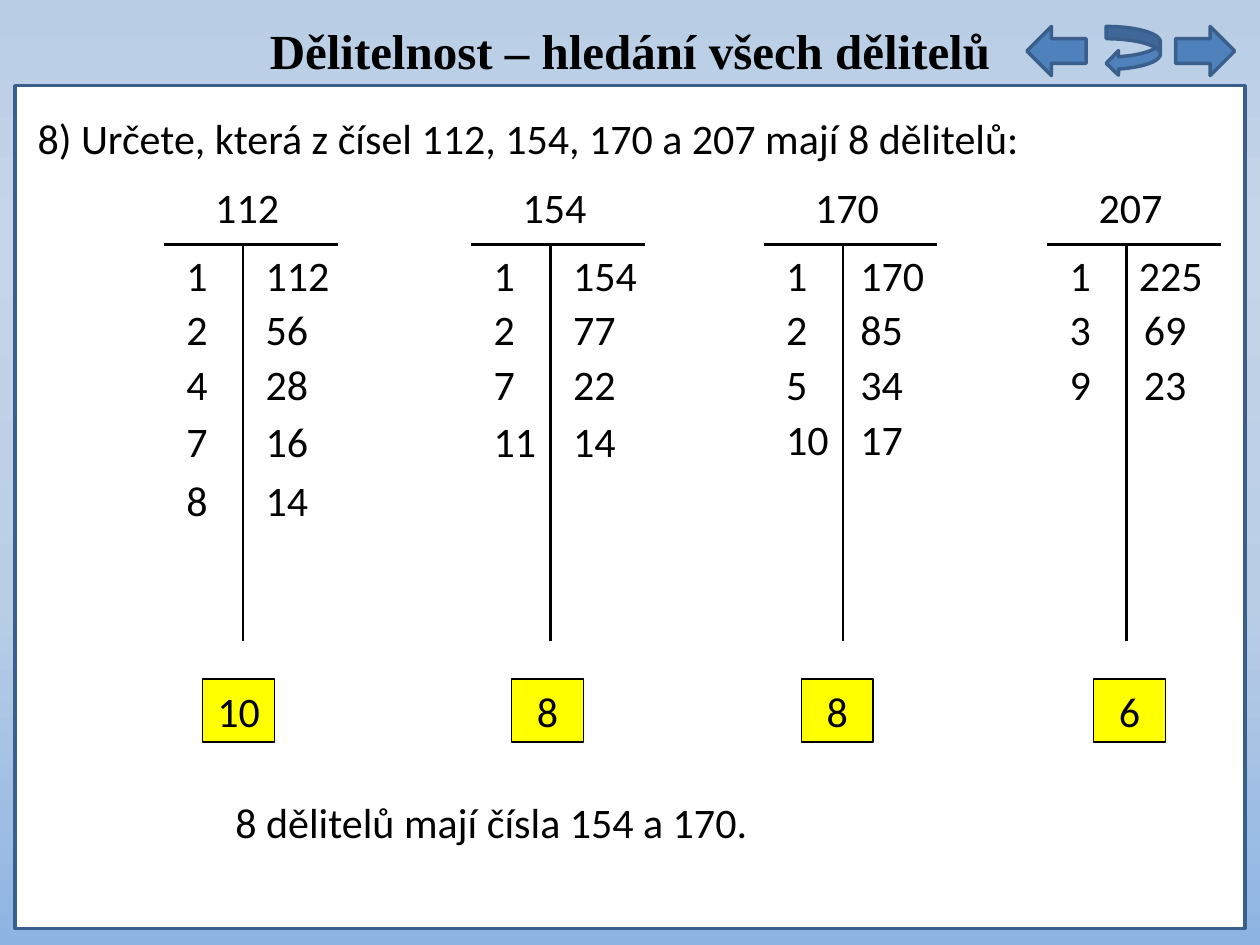
from dataclasses import dataclass

from lxml.etree import SubElement
from pptx import Presentation
from pptx.dml.color import RGBColor
from pptx.enum.shapes import MSO_CONNECTOR, MSO_SHAPE
from pptx.enum.text import MSO_ANCHOR, PP_ALIGN
from pptx.oxml.ns import qn
from pptx.util import Inches, Pt


@dataclass(frozen=True)
class Theme:
    ink: str = "000000"
    paper: str = "FFFFFF"
    blue: str = "4F81BD"
    outline: str = "3A5F8C"
    highlight: str = "FFFF00"
    sky: tuple = ((0, "B9CDE5"), (25, "C5D5E9"), (64, "B9CDE5"), (100, "8EB4E3"))
    title_font: str = "Times New Roman"
    body_font: str = "Calibri"
    title_size: int = 28
    body_size: int = 24


@dataclass(frozen=True)
class DivisorTable:
    number: str
    left: float
    pairs: tuple
    count: str
    count_left: float
    right_offset: float = 0.71
    first_right_offset: float = 0.71
    low_width: float = 0.55
    row_tops: tuple = (1.93, 2.36, 2.8, 3.25, 3.72)


THEME = Theme()
LINE_HEIGHT = 0.5
CELL_WIDTH = 0.79

TABLES = (
    DivisorTable("112", 1.3, (("1", "112"), ("2", "56"), ("4", "28"), ("7", "16"), ("8", "14")),
                 "10", 1.61),
    DivisorTable("154", 3.74, (("1", "154"), ("2", "77"), ("7", "22"), ("11", "14")),
                 "8", 4.06),
    DivisorTable("170", 6.06, (("1", "170"), ("2", "85"), ("5", "34"), ("10", "17")),
                 "8", 6.36, 0.67, 0.67, CELL_WIDTH, (1.93, 2.36, 2.8, 3.23)),
    DivisorTable("207", 8.31, (("1", "225"), ("3", "69"), ("9", "23")),
                 "6", 8.68, 0.67, 0.63, CELL_WIDTH),
)


def color(value):
    return RGBColor.from_string(value)


def paint_background(page):
    fill = page.background.fill
    fill.gradient()
    fill.gradient_angle = 270  # counter-clockwise, so the colours run downwards
    stops = page.background._cSld.find(".//" + qn("a:gsLst"))
    for stop in list(stops):
        stops.remove(stop)
    for percent, value in THEME.sky:
        stop = SubElement(stops, qn("a:gs"), pos=str(percent * 1000))
        SubElement(stop, qn("a:srgbClr"), val=value)


def write(frame, text, align=PP_ALIGN.LEFT, font=THEME.body_font,
          size=THEME.body_size, bold=False):
    frame.word_wrap = True
    para = frame.paragraphs[0]
    para.alignment = align
    span = para.add_run()
    span.text = text
    span.font.name = font
    span.font.size = Pt(size)
    span.font.bold = bold
    span.font.color.rgb = color(THEME.ink)


def add_title(page, text):
    title = page.shapes.title
    title.left, title.top = Inches(0.12), Inches(0.11)
    title.width, title.height = Inches(9.76), Inches(0.57)
    title.text_frame.vertical_anchor = MSO_ANCHOR.MIDDLE
    write(title.text_frame, text, PP_ALIGN.CENTER, THEME.title_font, THEME.title_size, True)


def add_text(page, text, left, top, width=CELL_WIDTH):
    box = page.shapes.add_textbox(Inches(left), Inches(top), Inches(width), Inches(LINE_HEIGHT))
    write(box.text_frame, text)


def add_figure(page, kind, left, top, width, height, fill, line=THEME.outline, weight=2):
    figure = page.shapes.add_shape(kind, Inches(left), Inches(top), Inches(width), Inches(height))
    figure.shadow.inherit = False
    figure.fill.solid()
    figure.fill.fore_color.rgb = color(fill)
    figure.line.color.rgb = color(line)
    figure.line.width = Pt(weight)
    return figure


def add_line(page, x1, y1, x2, y2):
    line = page.shapes.add_connector(MSO_CONNECTOR.STRAIGHT, Inches(x1), Inches(y1),
                                     Inches(x2), Inches(y2))
    line.line.color.rgb = color(THEME.ink)
    line.line.width = Pt(1.5)
    SubElement(line._element.spPr, qn("a:effectLst"))


def add_divisor_table(page, table):
    # Ruled T with the number on top
    left, rule, middle = table.left, 1.94, table.left + 0.63
    add_line(page, left, rule, left + 1.38, rule)
    add_line(page, middle, rule, middle, 5.09)
    add_text(page, table.number, left + 0.31, 1.39)

    # Pairs of divisors
    for row, (top, (small, large)) in enumerate(zip(table.row_tops, table.pairs)):
        width = CELL_WIDTH if row < 2 else table.low_width
        offset = table.right_offset if row else table.first_right_offset
        add_text(page, small, left + 0.08, top, width)
        add_text(page, large, left + offset, top, width)

    # Number of divisors
    count = add_figure(page, MSO_SHAPE.RECTANGLE, table.count_left, 5.39, 0.57, LINE_HEIGHT,
                       THEME.highlight, THEME.ink, 0.75)
    write(count.text_frame, table.count, PP_ALIGN.CENTER)


def add_navigation(page):
    for kind, left, width in ((MSO_SHAPE.RIGHT_ARROW, 8.15, 0.47),
                              (MSO_SHAPE.CURVED_LEFT_ARROW, 8.78, 0.43),
                              (MSO_SHAPE.RIGHT_ARROW, 9.33, 0.47)):
        arrow = add_figure(page, kind, left, 0.21, width, 0.39, THEME.blue)
        if left == 8.15:  # the back arrow is mirrored
            arrow._element.spPr.find(qn("a:xfrm")).set("flipH", "1")


def main():
    deck = Presentation()
    deck.slide_width, deck.slide_height = Inches(10), Inches(7.5)
    page = deck.slides.add_slide(deck.slide_layouts[5])

    # Backdrop and heading
    paint_background(page)
    add_title(page, "Dělitelnost – hledání všech dělitelů")
    add_figure(page, MSO_SHAPE.RECTANGLE, 0.12, 0.68, 9.76, 6.69, THEME.paper)

    # Task, working and answer
    add_text(page, "8) Určete, která z čísel 112, 154, 170 a 207 mají 8 dělitelů:", 0.2, 0.84, 9.61)
    for table in TABLES:
        add_divisor_table(page, table)
    add_text(page, "8 dělitelů mají čísla 154 a 170.", 1.77, 6.27, 4.88)

    add_navigation(page)
    deck.save("out.pptx")


if __name__ == "__main__":
    main()
